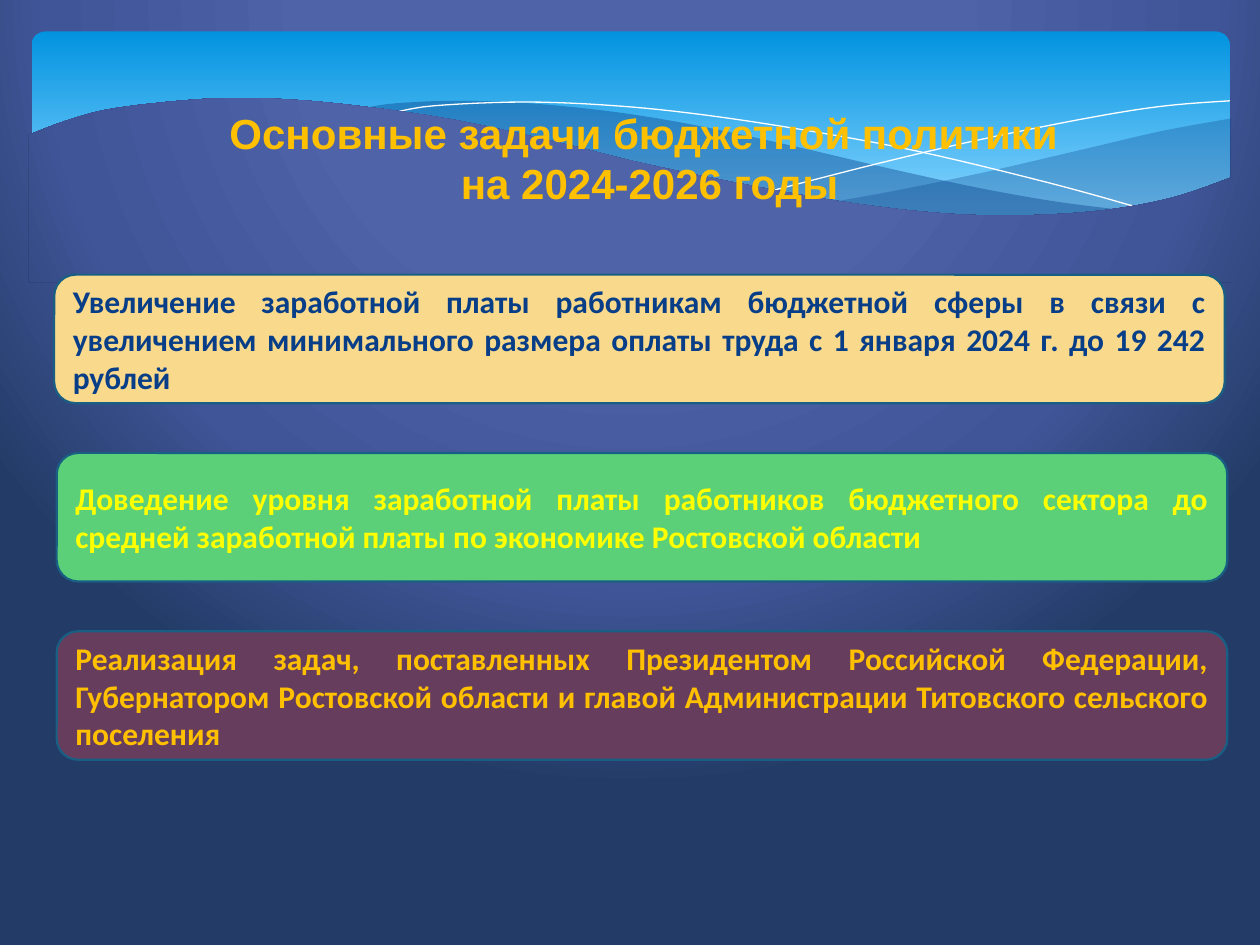
from lxml.etree import SubElement
from pptx import Presentation
from pptx.dml.color import RGBColor
from pptx.enum.shapes import MSO_SHAPE
from pptx.enum.text import MSO_ANCHOR, PP_ALIGN
from pptx.oxml import parse_xml
from pptx.oxml.ns import nsdecls, qn
from pptx.util import Inches, Pt

COLORS = {
    "glow": "4E63A8", "mid": "405598", "night": "233C67",
    "sky": "0293E0", "pale": "83D3FE", "navy": "073E87",
    "white": "FFFFFF", "edge": "195F84", "gold": "FFC000",
    "sand": "F9D98C", "green": "5BD078", "plum": "673D5E", "yellow": "FFFF00",
}


def color(name):
    return RGBColor.from_string(COLORS[name])


def smooth(knots, steps=6):
    """Points of a soft curve through all knots."""
    ends = [knots[0], *knots, knots[-1]]
    curve = [knots[0]]
    for a, b, c, d in zip(ends, ends[1:], ends[2:], ends[3:]):
        for step in range(1, steps + 1):
            t = step / steps
            curve.append(tuple(
                (2 * q + (r - p) * t + (2 * p - 5 * q + 4 * r - s) * t ** 2
                 + (3 * q - p - 3 * r + s) * t ** 3) / 2
                for p, q, r, s in zip(a, b, c, d)))
    return curve


class Deck:
    head_font, body_font = "Arial", "Calibri"
    head_size, body_size = Pt(24), Pt(18)

    def __init__(self, slide):
        self.slide = slide

    def backdrop(self, stops):
        self.slide.background.fill.solid()
        holder = self.slide._element.find(".//" + qn("p:bgPr"))
        marks = "".join(
            f'<a:gs pos="{spot * 1000}"><a:srgbClr val="{COLORS[name]}"/></a:gs>'
            for spot, name in stops)
        holder.replace(holder[0], parse_xml(
            f'<a:gradFill {nsdecls("a")} rotWithShape="1"><a:gsLst>{marks}</a:gsLst>'
            '<a:path path="circle"><a:fillToRect l="20000" t="-40000" '
            'r="20000" b="140000"/></a:path></a:gradFill>'))

    def block(self, left, top, width, height, round_by=None):
        shape = self.slide.shapes.add_shape(
            MSO_SHAPE.ROUNDED_RECTANGLE, Inches(left), Inches(top),
            Inches(width), Inches(height))
        shape.shadow.inherit = False
        if round_by is not None:
            shape.adjustments[0] = round_by
        return shape

    def banner(self, *box):
        shape = self.block(*box, round_by=0.071)
        shape.fill.gradient()
        shape.fill.gradient_angle = 270
        for stop, spot, name in zip(shape.fill.gradient_stops, (0, 0.9), ("sky", "pale")):
            stop.position = spot
            stop.color.rgb = color(name)
        shape.line.fill.background()

    def outline(self, points, close):
        start, *rest = [(Inches(x), Inches(y)) for x, y in points]
        pen = self.slide.shapes.build_freeform(*start)
        pen.add_line_segments(rest, close=close)
        shape = pen.convert_to_shape()
        shape.shadow.inherit = False
        return shape

    def wave(self, points, name, alpha):
        shape = self.outline(points, True)
        shape.fill.solid()
        shape.fill.fore_color.rgb = color(name)
        tint = shape._element.spPr.find(".//" + qn("a:srgbClr"))
        SubElement(tint, qn("a:alpha"), val=str(alpha * 1000))
        shape.line.fill.background()

    def thread(self, points):
        shape = self.outline(points, False)
        shape.fill.background()
        shape.line.color.rgb = color("white")
        shape.line.width = Pt(0)

    def mask(self, points):
        shape = self.outline(points, True)
        shape.line.fill.background()
        # Shows the slide background through the banner
        shape._element.set("useBgFill", "1")

    def label(self, frame, lines, align, font, size, name):
        frame.word_wrap = True
        para = frame.paragraphs[0]
        para.alignment = align
        for index, line in enumerate(lines):
            if index:
                para.add_line_break()
            run = para.add_run()
            run.text = line
            run.font.name, run.font.size, run.font.bold = font, size, True
            run.font.color.rgb = color(name)

    def title(self, lines, left, top, width, height):
        box = self.slide.shapes.add_textbox(
            Inches(left), Inches(top), Inches(width), Inches(height))
        box.text_frame.vertical_anchor = MSO_ANCHOR.BOTTOM
        self.label(box.text_frame, lines, PP_ALIGN.CENTER,
                   self.head_font, self.head_size, "gold")

    def card(self, text, left, top, fill, ink):
        shape = self.block(left, top, 9.29, 1.02)
        shape.fill.solid()
        shape.fill.fore_color.rgb = color(fill)
        shape.line.color.rgb = color("edge")
        shape.line.width = Pt(1.25)
        shape.text_frame.vertical_anchor = MSO_ANCHOR.MIDDLE
        self.label(shape.text_frame, [text], PP_ALIGN.JUSTIFY,
                   self.body_font, self.body_size, ink)


def main():
    show = Presentation()
    show.slide_width, show.slide_height = Inches(10), Inches(7.5)
    deck = Deck(show.slides.add_slide(show.slide_layouts[6]))

    # Background and banner
    deck.backdrop([(40, "glow"), (74, "mid"), (100, "night")])
    deck.banner(0.25, 0.25, 9.51, 1.56)

    # Dark waves
    right_top = smooth([(9.77, 0.94), (9.22, 1.04), (8.62, 1.18), (7.8, 1.37),
                        (7.07, 1.52), (6.62, 1.6)])
    right_low = smooth([(6.62, 1.6), (7.06, 1.66), (7.58, 1.7), (8.15, 1.72),
                        (8.64, 1.7), (9.14, 1.62), (9.51, 1.52), (9.77, 1.42)])
    deck.wave(right_top + right_low[1:], "navy", 29)
    long_top = smooth([(8.94, 1.67), (8.38, 1.6), (7.76, 1.49), (7.07, 1.34),
                       (6.3, 1.16), (5.55, 1), (4.89, 0.89), (4.2, 0.82),
                       (3.62, 0.8), (3.14, 0.82), (2.87, 0.86)])
    long_low = smooth([(2.87, 0.86), (3.43, 0.94), (4.05, 1.06), (4.5, 1.16),
                       (5.3, 1.35), (6.02, 1.5), (6.66, 1.61), (7.23, 1.68),
                       (7.74, 1.72), (8.19, 1.73), (8.59, 1.71), (8.94, 1.67)])
    deck.wave(long_top + long_low[1:], "navy", 40)

    # White threads
    deck.thread(smooth([(3.1, 0.9), (3.44, 0.84), (4.17, 0.81), (4.89, 0.84),
                        (5.57, 0.91), (6.37, 1.03), (7.28, 1.2), (8.32, 1.45),
                        (9.08, 1.66)]))
    deck.thread(smooth([(6.14, 1.51), (6.96, 1.3), (7.77, 1.11), (8.67, 0.93),
                        (9.25, 0.84), (9.76, 0.8)]))

    # Lower edge of the banner
    edge = smooth([(9.77, 1.41), (9.3, 1.57), (8.75, 1.67), (8.09, 1.71),
                   (7.44, 1.69), (6.68, 1.6), (5.79, 1.44), (5.03, 1.28),
                   (4.47, 1.14), (3.65, 0.96), (2.92, 0.85), (2.3, 0.79),
                   (1.77, 0.78), (1.32, 0.81), (0.85, 0.87), (0.52, 0.96),
                   (0.23, 1.07)])
    deck.mask(edge + [(0.23, 2.24), (9.77, 2.24)])

    # Title and tasks
    deck.title(["Основные задачи бюджетной политики ", "на 2024-2026 годы"],
               1.06, 1.15, 8.19, 0.55)
    tasks = [
        ("Увеличение заработной платы работникам бюджетной сферы в связи с "
         "увеличением минимального размера оплаты труда с 1 января 2024 г. "
         "до 19 242 рублей", 0.43, "sand", "navy"),
        ("Доведение уровня заработной платы работников бюджетного сектора до "
         "средней заработной платы по экономике Ростовской области",
         0.45, "green", "yellow"),
        ("Реализация задач, поставленных Президентом Российской Федерации, "
         "Губернатором Ростовской области и главой Администрации Титовского "
         "сельского поселения", 0.45, "plum", "gold"),
    ]
    for index, (text, left, fill, ink) in enumerate(tasks):
        deck.card(text, left, 2.18 + 1.415 * index, fill, ink)

    show.save("out.pptx")


if __name__ == "__main__":
    main()
